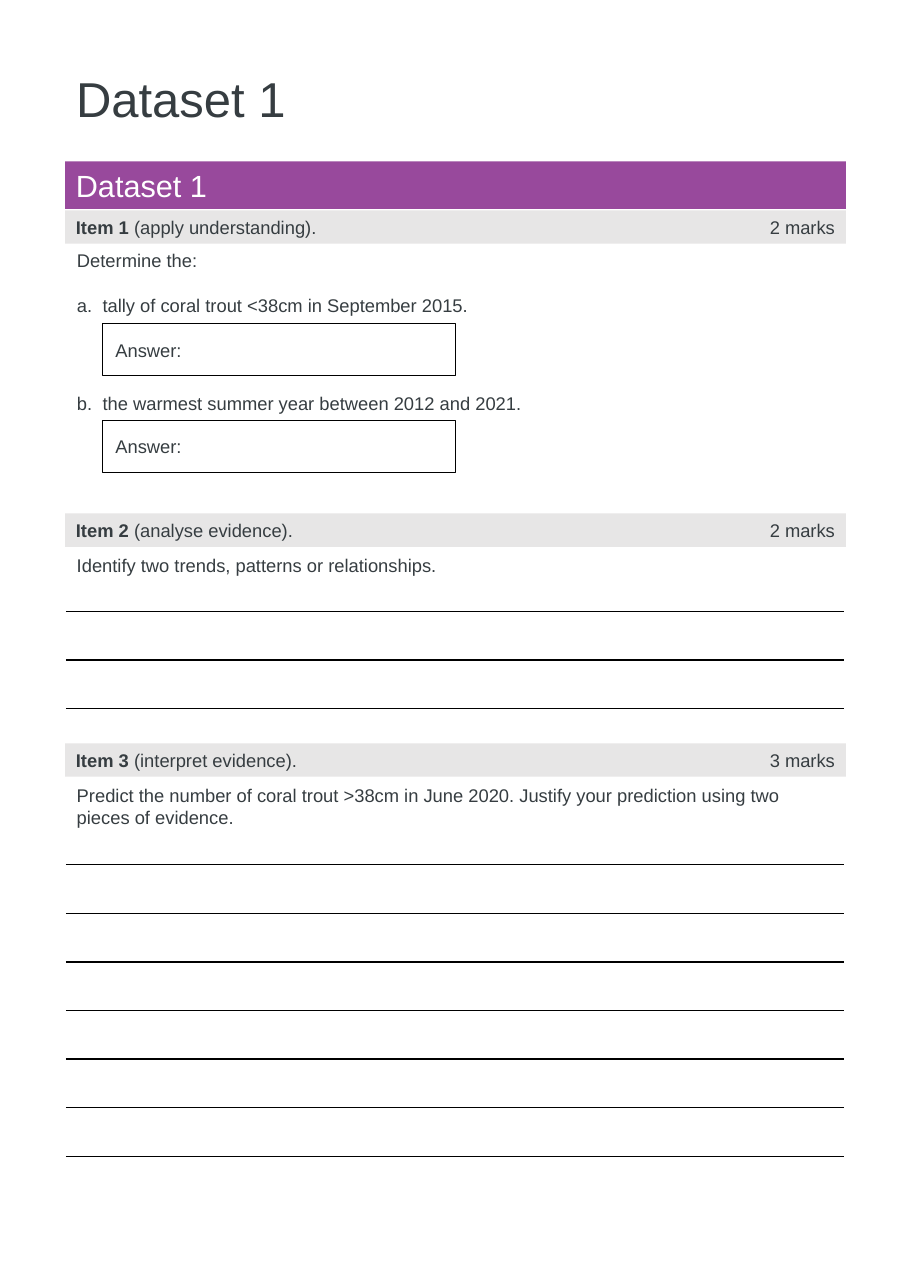
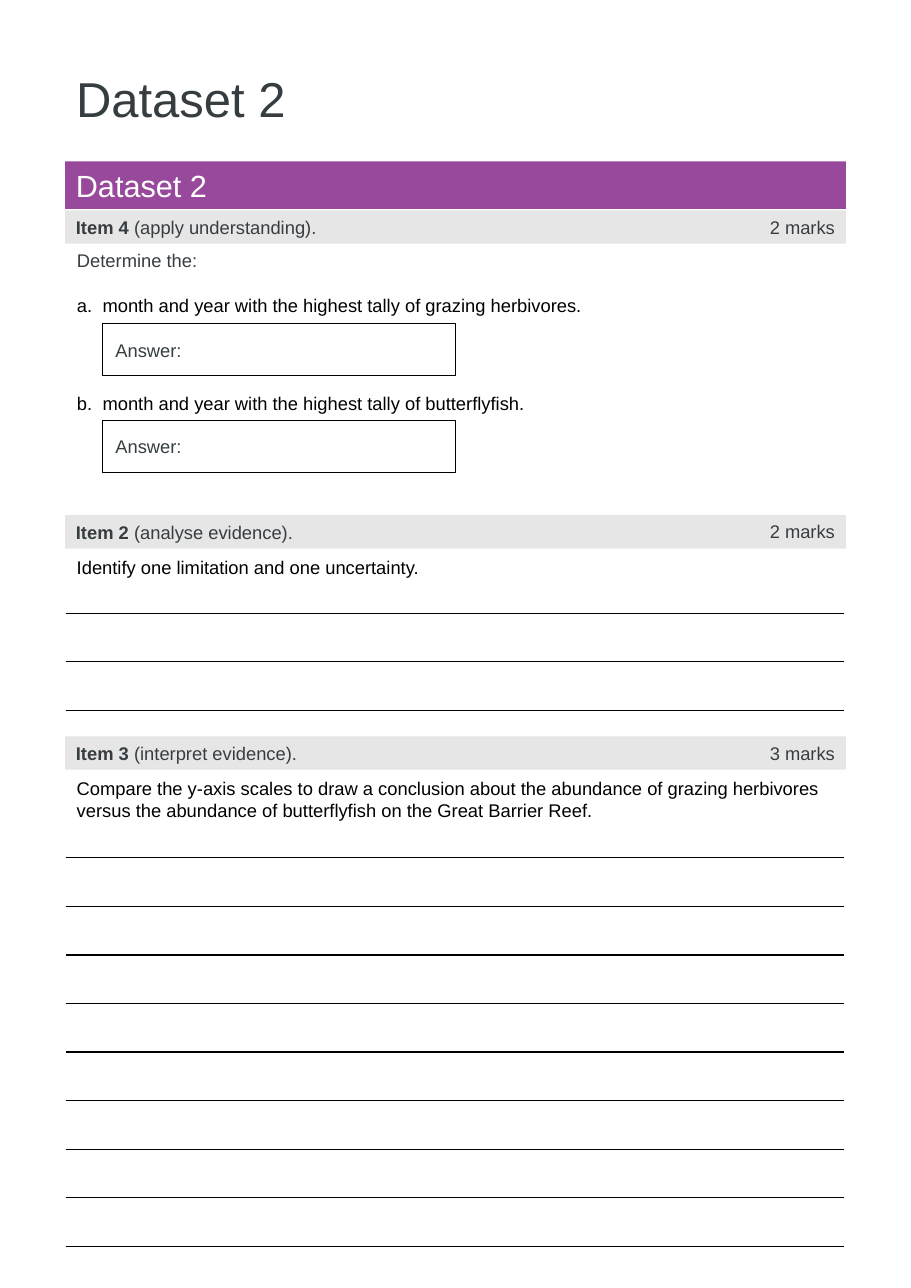
from dataclasses import dataclass

from lxml import etree
from pptx import Presentation
from pptx.dml.color import RGBColor
from pptx.enum import shapes, text
from pptx.oxml import ns
from pptx.util import Cm, Pt


@dataclass(frozen=True)
class Theme:
    font: str = "Arial"
    ink: str = "363D41"
    black: str = "000000"
    white: str = "FFFFFF"
    purple: str = "98499C"
    grey: str = "E7E6E6"
    title_size: int = 32
    band_size: int = 20
    text_size: int = 12
    box_line: float = 0.75
    rule_line: int = 1


THEME = Theme()

WORKSHEETS = [
    {
        "title": "Dataset 1",
        "colour": THEME.ink,
        "first": ("Item 1", "(apply understanding).", "2 marks"),
        "intro": "Determine the:",
        "questions": [
            "tally of coral trout <38cm in September 2015.",
            "the warmest summer year between 2012 and 2021.",
        ],
        "written": [
            {"heading": ("Item 2", "(analyse evidence).", "2 marks"),
             "prompt": "Identify two trends, patterns or relationships.",
             "top": 11.84, "gap": 2.26, "rows": 2},
            {"heading": ("Item 3", "(interpret evidence).", "3 marks"),
             "prompt": "Predict the number of coral trout >38cm in June 2020. "
                       "Justify your prediction using two pieces of evidence.",
             "top": 17.14, "gap": 2.8, "rows": 6},
        ],
    },
    {
        "title": "Dataset 2",
        "colour": THEME.black,
        "first": ("Item 4", "(apply understanding).", "2 marks"),
        "intro": "Determine the:",
        "questions": [
            "month and year with the highest tally of grazing herbivores.",
            "month and year with the highest tally of butterflyfish.",
        ],
        "written": [
            {"heading": ("Item 2", "(analyse evidence).", "2 marks"),
             "prompt": "Identify one limitation and one uncertainty.",
             "top": 11.88, "gap": 2.26, "rows": 2},
            {"heading": ("Item 3", "(interpret evidence).", "3 marks"),
             "prompt": "Compare the y-axis scales to draw a conclusion about the "
                       "abundance of grazing herbivores versus the abundance of "
                       "butterflyfish on the Great Barrier Reef.",
             "top": 16.98, "gap": 2.8, "rows": 8},
        ],
    },
]

LEFT, WIDTH = 1.5, 18.0
FIRST_BAR_TOP, BAR_HEIGHT = 4.85, 0.77
ANSWER_TOP, ANSWER_STEP = 7.47, 2.23
MARKS_WIDTH = 3.05
ROW_HEIGHT = 1.12
LIST_INDENT = 0.59
QUESTION_GAPS = (15, 50)


def place(shape, left, top, width, height):
    shape.left, shape.top = Cm(left), Cm(top)
    shape.width, shape.height = Cm(width), Cm(height)


def write(paragraph, content, size=THEME.text_size, colour=THEME.ink,
          bold=False, align=text.PP_ALIGN.LEFT, before=0):
    paragraph.alignment = align
    paragraph.space_before = Pt(before)
    run = paragraph.add_run()
    run.text = content
    run.font.name = THEME.font
    run.font.size = Pt(size)
    run.font.bold = bold
    run.font.color.rgb = RGBColor.from_string(colour)


def prepare(shape, anchor=text.MSO_ANCHOR.TOP):
    frame = shape.text_frame
    frame.word_wrap = True
    frame.auto_size = text.MSO_AUTO_SIZE.NONE
    frame.vertical_anchor = anchor
    return frame


def add_text(slide, box, content, **style):
    shape = slide.shapes.add_textbox(*map(Cm, box))
    write(prepare(shape).paragraphs[0], content, **style)


def add_rectangle(slide, box, fill=None):
    shape = slide.shapes.add_shape(shapes.MSO_SHAPE.RECTANGLE, *map(Cm, box))
    shape.shadow.inherit = False
    if fill:
        shape.fill.solid()
        shape.fill.fore_color.rgb = RGBColor.from_string(fill)
        shape.line.fill.background()
    else:
        shape.fill.background()
        shape.line.color.rgb = RGBColor.from_string(THEME.black)
        shape.line.width = Pt(THEME.box_line)
    return prepare(shape, text.MSO_ANCHOR.MIDDLE)


def add_heading(slide, top, heading):
    item, skill, marks = heading
    frame = add_rectangle(slide, (LEFT, top, WIDTH, BAR_HEIGHT), THEME.grey)
    write(frame.paragraphs[0], item + " ", bold=True)
    write(frame.paragraphs[0], skill)
    marks_left = LEFT + WIDTH - MARKS_WIDTH
    add_text(slide, (marks_left, top, MARKS_WIDTH, BAR_HEIGHT), marks,
             align=text.PP_ALIGN.RIGHT)


def set_bullet(paragraph, tag, indent, **attributes):
    properties = paragraph._p.get_or_add_pPr()
    properties.set("marL", str(Cm(indent)))
    properties.set("indent", str(-Cm(indent)))
    etree.SubElement(properties, ns.qn(tag), attributes)


def add_questions(slide, worksheet):
    body = slide.placeholders[1]
    place(body, LEFT + 0.02, 5.61, WIDTH, 4.1)
    frame = prepare(body)
    write(frame.paragraphs[0], worksheet["intro"])
    set_bullet(frame.paragraphs[0], "a:buNone", 0)
    for index, question in enumerate(worksheet["questions"]):
        paragraph = frame.add_paragraph()
        write(paragraph, question, colour=worksheet["colour"],
              before=QUESTION_GAPS[index])
        set_bullet(paragraph, "a:buAutoNum", LIST_INDENT, type="alphaLcPeriod")
        answer_top = ANSWER_TOP + index * ANSWER_STEP
        answer = add_rectangle(slide, (2.36, answer_top, 8.15, 1.19))
        answer.margin_left = Cm(0.3)
        write(answer.paragraphs[0], "Answer:")


def set_borders(cell):
    cell.fill.background()
    properties = cell._tc.get_or_add_tcPr()
    for position, side in enumerate(("lnL", "lnR", "lnT", "lnB")):
        line = etree.Element(ns.qn("a:" + side))
        if side in ("lnT", "lnB"):
            line.set("w", str(Pt(THEME.rule_line)))
            fill = etree.SubElement(line, ns.qn("a:solidFill"))
            etree.SubElement(fill, ns.qn("a:srgbClr"), val=THEME.black)
        else:
            etree.SubElement(line, ns.qn("a:noFill"))
        properties.insert(position, line)


def add_writing_lines(slide, top, rows):
    table = slide.shapes.add_table(
        rows, 1, Cm(LEFT + 0.02), Cm(top), Cm(17.93), Cm(rows * ROW_HEIGHT)).table
    table.first_row = False
    table.horz_banding = False
    for row in table.rows:
        row.height = Cm(ROW_HEIGHT)
        set_borders(row.cells[0])


def build_slide(presentation, worksheet):
    slide = presentation.slides.add_slide(presentation.slide_layouts[1])
    title = slide.shapes.title
    place(title, LEFT, 1.45, 10.4, 1.63)
    write(prepare(title).paragraphs[0], worksheet["title"], size=THEME.title_size)

    band = add_rectangle(slide, (LEFT, 3.72, WIDTH, 1.1), THEME.purple)
    write(band.paragraphs[0], worksheet["title"], size=THEME.band_size,
          colour=THEME.white)

    add_heading(slide, FIRST_BAR_TOP, worksheet["first"])
    add_questions(slide, worksheet)
    for item in worksheet["written"]:
        add_heading(slide, item["top"], item["heading"])
        add_text(slide, (LEFT + 0.02, item["top"] + 0.81, 17.93, item["gap"] - 1.5),
                 item["prompt"], colour=worksheet["colour"])
        add_writing_lines(slide, item["top"] + item["gap"], item["rows"])


def main():
    presentation = Presentation()
    presentation.slide_width, presentation.slide_height = Cm(21), Cm(29.7)
    for worksheet in WORKSHEETS:
        build_slide(presentation, worksheet)
    presentation.save("out.pptx")


if __name__ == "__main__":
    main()
